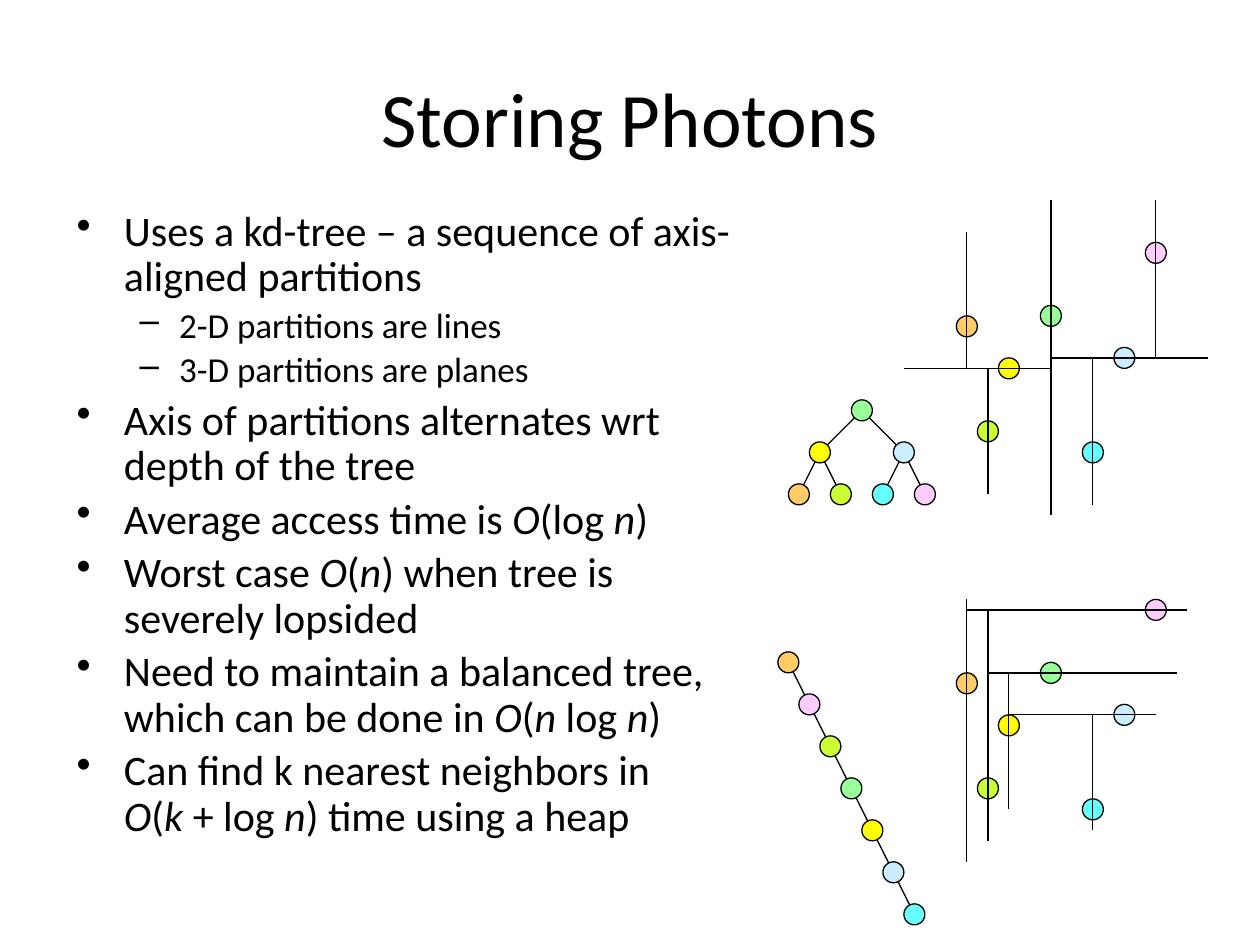
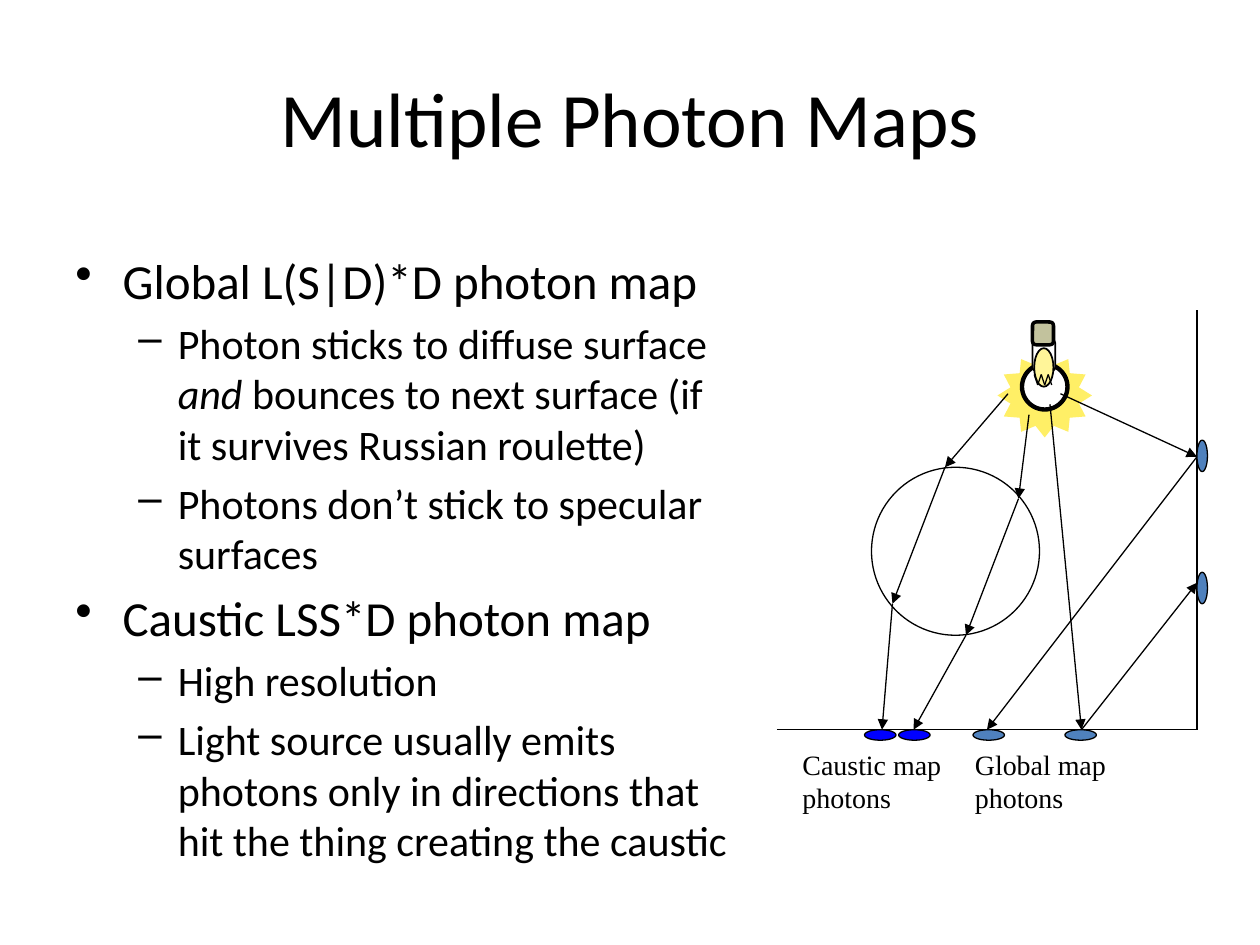
"""Build two slides on photon maps: kd-tree storage and separate global and caustic maps."""
from itertools import pairwise

from lxml import etree
from pptx import Presentation
from pptx.dml.color import RGBColor
from pptx.enum.shapes import MSO_CONNECTOR, MSO_SHAPE
from pptx.enum.text import MSO_ANCHOR, PP_ALIGN
from pptx.oxml.ns import qn
from pptx.util import Pt

STRAIGHT = MSO_CONNECTOR.STRAIGHT
OVAL = MSO_SHAPE.OVAL
BURST = MSO_SHAPE.STAR_12_POINT
BLOCK = MSO_SHAPE.ROUNDED_RECTANGLE
CENTER = PP_ALIGN.CENTER
MIDDLE = MSO_ANCHOR.MIDDLE
TITLE_ONLY = 5

COLORS = {
    "ink": "000000", "white": "FFFFFF",
    "orange": "FFCC66", "yellow": "FFFF00", "pink": "FFCCFF", "lime": "CCFF33",
    "green": "99FF99", "sky": "CCECFF", "cyan": "66FFFF",
    "global": "4F81BD", "caustic": "0000FF",
    "glow": "FFEF66", "filament": "FFF599", "socket": "C2C29D",
}
SANS, SERIF = "Calibri", "Times New Roman"
BULLETS = [("•", 27, -27), ("–", 58.5, -22.5)]

STORING_POINTS = [
    (0, "Uses a kd-tree – a sequence of axis-aligned partitions"),
    (1, "2-D partitions are lines"),
    (1, "3-D partitions are planes"),
    (0, "Axis of partitions alternates wrt depth of the tree"),
    (0, "Average access time is _O_(log _n_)"),
    (0, "Worst case _O_(_n_) when tree is severely lopsided"),
    (0, "Need to maintain a balanced tree, which can be done in _O_(_n_ log _n_)"),
    (0, "Can find k nearest neighbors in\n_O_(_k_ + log _n_) time using a heap"),
]
MAP_POINTS = [
    (0, "Global L(S|D)*D photon map"),
    (1, "Photon sticks to diffuse surface _and_ bounces to next surface "
        "(if it survives Russian roulette)"),
    (1, "Photons don’t stick to specular surfaces"),
    (0, "Caustic LSS*D photon map"),
    (1, "High resolution"),
    (1, "Light source usually emits photons only in directions that hit "
        "the thing creating the caustic"),
]

DOT = 12
GRID_SHIFT = 0.5
LOPSIDED_DROP = 204
PHOTONS = {
    "orange": (552, 186), "yellow": (576, 210), "pink": (660, 144),
    "lime": (564, 246), "green": (600, 180), "sky": (642, 204), "cyan": (624, 258),
}
BALANCED_LEVELS = [
    {"green": (114, 294)},
    {"yellow": (516, 600), "sky": (600, 690)},
    {"orange": (132, 210), "lime": (210, 282), "cyan": (204, 288), "pink": (114, 204)},
]
LOPSIDED_LEVELS = [
    {"orange": (342, 492)}, {"pink": (552, 678)}, {"lime": (348, 480)},
    {"green": (564, 672)}, {"yellow": (384, 462)}, {"sky": (576, 660)},
    {"cyan": (408, 474)},
]
TREE_ROOT, TREE_DROP, TREE_SPREAD = (492, 234), 24, 48
CHAIN_START, CHAIN_STEP = (450, 378), (12, 24)

FLOOR, WALL = 417, 684
ROOM = [(444, FLOOR), (WALL, FLOOR), (WALL, 177)]
GLASS_BALL = (498, 267, 96, 96)
RAYS = [
    [(606, 225), (WALL, 261), (564, FLOOR)],
    [(600, 231), (618, FLOOR), (WALL, 333)],
    [(576, 225), (540, 267), (510, 345), (504, FLOOR)],
    [(588, 237), (582, 285), (552, 363), (522, FLOOR)],
]
WALL_SPOTS = [251.5, 327]
FLOOR_SPOTS = [("global", 556), ("global", 608.5), ("caustic", 513.5), ("caustic", 494)]
SPOT_LONG, SPOT_SHORT = 18, 6
MAP_LABELS = [
    ("Caustic map\nphotons", (451.5, 423.5, 94, 49.5)),
    ("Global map\nphotons", (550, 423.5, 90, 49.5)),
]
BULB_PARTS = [
    (BURST, (570, 202, 54, 48), "glow", 0),
    (OVAL, (584, 208, 26, 26), "white", 2.5),
    (BLOCK, (590, 194, 13, 18), "white", 1),
    (BLOCK, (590, 184, 12, 13), "socket", 2),
    (OVAL, (591, 199, 11, 22), "filament", 1),
]
COIL_LEFT, COIL_TOP, COIL_STEP, COIL_TURNS = 591, 214, 2, 6


def rgb(name):
    return RGBColor.from_string(COLORS[name])


def points(values):
    return [Pt(value) for value in values]


def set_font(paragraph, family, size):
    paragraph.font.name = family
    paragraph.font.size = Pt(size)
    paragraph.font.color.rgb = rgb("ink")


def write_runs(paragraph, marked):
    for index, piece in enumerate(marked.split("_")):
        for row, words in enumerate(piece.split("\n")):
            if row:
                paragraph.add_line_break()
            if words:
                run = paragraph.add_run()
                run.text = words
                if index % 2:
                    run.font.italic = True


def add_titled_slide(deck, title):
    slide = deck.slides.add_slide(deck.slide_layouts[TITLE_ONLY])
    heading = slide.shapes.title
    heading.left, heading.top, heading.width, heading.height = points((36, 21.6, 648, 90))
    heading.text_frame.text = title
    heading.text_frame.vertical_anchor = MIDDLE
    paragraph = heading.text_frame.paragraphs[0]
    paragraph.alignment = CENTER
    set_font(paragraph, SANS, 44)
    return slide


def add_bullets(slide, box, items, sizes, line_spacing):
    frame = slide.shapes.add_textbox(*points(box)).text_frame
    frame.word_wrap = True
    for index, (level, marked) in enumerate(items):
        paragraph = frame.paragraphs[0] if index == 0 else frame.add_paragraph()
        paragraph.level = level
        paragraph.line_spacing = line_spacing
        paragraph.space_before = Pt(0.2 * sizes[level])
        bullet, margin, indent = BULLETS[level]
        properties = paragraph._p.get_or_add_pPr()
        properties.set("marL", str(Pt(margin)))
        properties.set("indent", str(Pt(indent)))
        etree.SubElement(properties, qn("a:buChar")).set("char", bullet)
        set_font(paragraph, SANS, sizes[level])
        write_runs(paragraph, marked)


def add_line(slide, start, end, arrow=False):
    line = slide.shapes.add_connector(STRAIGHT, *points((*start, *end)))
    line.line.color.rgb = rgb("ink")
    line.line.width = Pt(0.75)
    properties = line.element.spPr
    if arrow:
        outline = properties.find(qn("a:ln"))
        etree.SubElement(outline, qn("a:tailEnd")).set("type", "triangle")
    etree.SubElement(properties, qn("a:effectLst"))


def add_figure(slide, preset, box, color=None, outline=0.75):
    figure = slide.shapes.add_shape(preset, *points(box))
    figure.shadow.inherit = False
    if color:
        figure.fill.solid()
        figure.fill.fore_color.rgb = rgb(color)
    else:
        figure.fill.background()
    if outline:
        figure.line.color.rgb = rgb("ink")
        figure.line.width = Pt(outline)
    else:
        figure.line.fill.background()


def on_grid(point, drop=0):
    x, y = point
    return x + GRID_SHIFT, y + drop + GRID_SHIFT


def add_photon(slide, color, center, drop=0):
    x, y = on_grid(center, drop)
    add_figure(slide, OVAL, (x - DOT / 2, y - DOT / 2, DOT, DOT), color)


def add_partition(slide, levels, drop):
    for color, center in PHOTONS.items():
        add_photon(slide, color, center, drop)
    for depth, cuts in enumerate(levels):
        for color, (low, high) in cuts.items():
            x, y = PHOTONS[color]
            ends = [(low, y + drop), (high, y + drop)] if depth % 2 else [(x, low), (x, high)]
            add_line(slide, *map(on_grid, ends))


def add_tree(slide, nodes, edges):
    for start, end in edges:
        add_line(slide, on_grid(start), on_grid(end))
    for color, center in nodes:
        add_photon(slide, color, center)


def balanced_tree():
    root_x, root_y = TREE_ROOT
    rows = []
    for depth, colors in enumerate(BALANCED_LEVELS):
        gap = TREE_SPREAD / max(1, 2 ** (depth - 1))
        first = root_x - gap * (len(colors) - 1) / 2
        rows.append([(first + gap * i, root_y + TREE_DROP * depth) for i in range(len(colors))])
    nodes = [node for colors, row in zip(BALANCED_LEVELS, rows) for node in zip(colors, row)]
    edges = [(parents[i // 2], child) for parents, children in pairwise(rows)
             for i, child in enumerate(children)]
    return nodes, edges


def lopsided_tree():
    (x, y), (dx, dy) = CHAIN_START, CHAIN_STEP
    nodes = [(color, (x + dx * depth, y + dy * depth))
             for depth, cuts in enumerate(LOPSIDED_LEVELS) for color in cuts]
    return nodes, [(nodes[0][1], nodes[-1][1])]


def add_bulb(slide):
    for part in BULB_PARTS:
        add_figure(slide, *part)
    coil = [(COIL_LEFT + COIL_STEP * i, COIL_TOP + 3 * COIL_STEP * (i % 2))
            for i in range(COIL_TURNS)]
    for start, end in pairwise(coil):
        add_line(slide, start, end)


def build_storing(deck):
    slide = add_titled_slide(deck, "Storing Photons")
    add_bullets(slide, (36.75, 116.5, 402.5, 364.5), STORING_POINTS, (24, 20), 0.9)
    add_partition(slide, BALANCED_LEVELS, 0)
    add_tree(slide, *balanced_tree())
    add_partition(slide, LOPSIDED_LEVELS, LOPSIDED_DROP)
    add_tree(slide, *lopsided_tree())


def build_maps(deck):
    slide = add_titled_slide(deck, "Multiple Photon Maps")
    add_bullets(slide, (36, 139.5, 391.5, 364.5), MAP_POINTS, (28, 24), 1.0)
    for start, end in pairwise(ROOM):
        add_line(slide, start, end)
    add_bulb(slide)
    add_figure(slide, OVAL, GLASS_BALL)
    for ray in RAYS:
        for start, end in pairwise(ray):
            add_line(slide, start, end, arrow=True)
    for top in WALL_SPOTS:
        add_figure(slide, OVAL, (WALL, top, SPOT_SHORT, SPOT_LONG), "global")
    for color, left in FLOOR_SPOTS:
        add_figure(slide, OVAL, (left, FLOOR, SPOT_LONG, SPOT_SHORT), color)
    for label, box in MAP_LABELS:
        frame = slide.shapes.add_textbox(*points(box)).text_frame
        frame.word_wrap = False
        set_font(frame.paragraphs[0], SERIF, 16)
        write_runs(frame.paragraphs[0], label)


def main():
    deck = Presentation()
    deck.slide_width, deck.slide_height = points((720, 540))
    build_storing(deck)
    build_maps(deck)
    deck.save("out.pptx")


if __name__ == "__main__":
    main()
